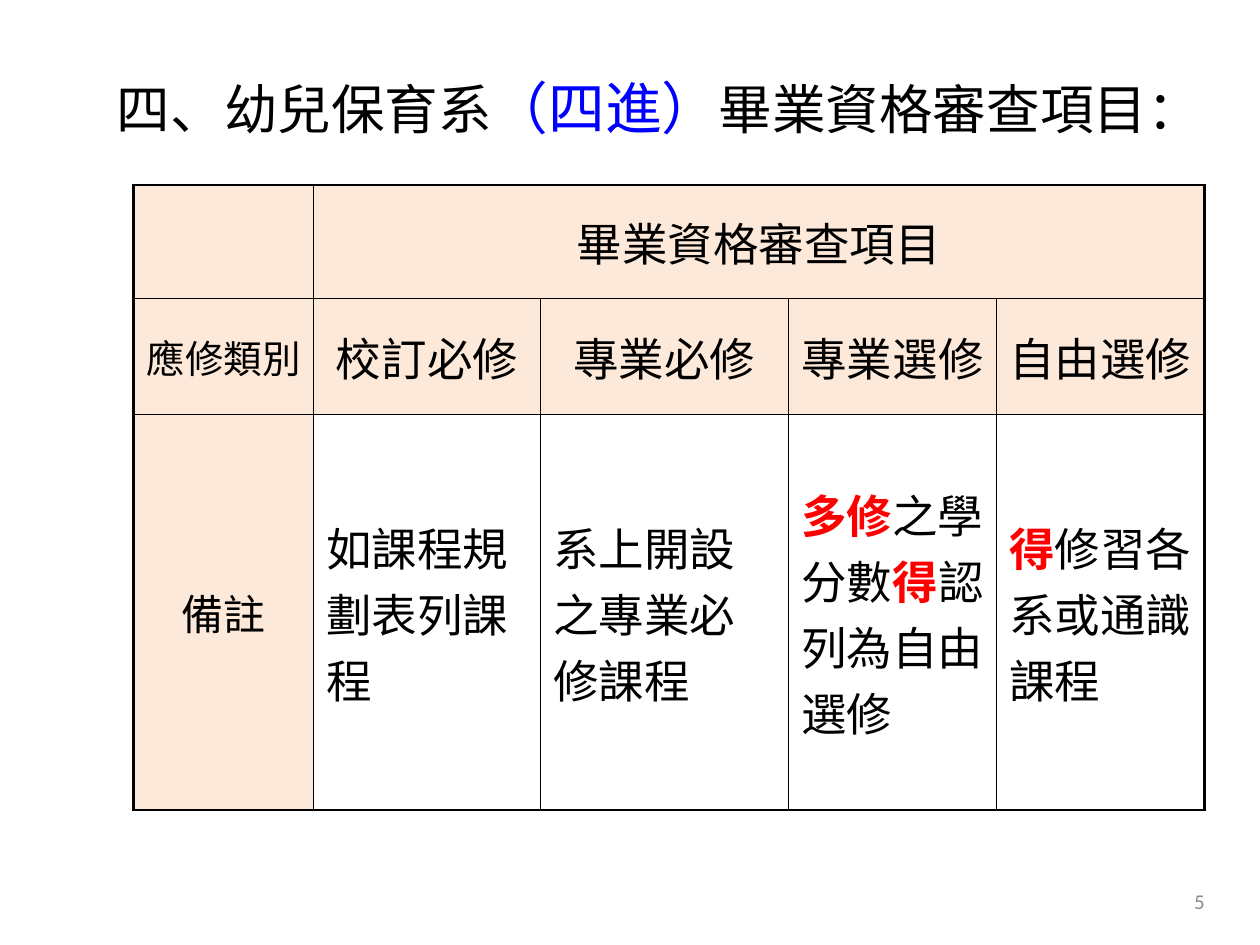
from lxml import etree
from pptx import Presentation
from pptx.dml.color import RGBColor
from pptx.enum.text import MSO_ANCHOR, PP_ALIGN
from pptx.oxml.ns import qn
from pptx.util import Inches, Pt

BLACK = RGBColor(0x00, 0x00, 0x00)
BLUE = RGBColor(0x00, 0x00, 0xFF)
RED = RGBColor(0xFF, 0x00, 0x00)
GRAY = RGBColor(0x8C, 0x8C, 0x8C)
PEACH = RGBColor(0xFD, 0xE9, 0xD9)

TITLE_FONT = "Noto Sans CJK JP"
TABLE_FONT = "Times New Roman"
NUMBER_FONT = "Calibri"

COLUMN_WIDTHS = [1.43, 1.8, 1.97, 1.65, 1.65]
ROW_HEIGHTS = [0.9, 0.92, 3.14]

# Each cell is a list of (text, emphasised) runs.
ROWS = [
    [[], [("畢業資格審查項目", False)], [], [], []],
    [[(name, False)] for name in ("應修類別", "校訂必修", "專業必修", "專業選修", "自由選修")],
    [
        [("備註", False)],
        [("如課程規劃表列課程", False)],
        [("系上開設之專業必修課程", False)],
        [("多修", True), ("之學分數", False), ("得", True), ("認列為自由選修", False)],
        [("得", True), ("修習各系或通識課程", False)],
    ],
]
FONT_SIZES = {(1, 0): 22, (2, 0): 24}
DEFAULT_SIZE = 26


def add_text_box(slide, left, top, width, height):
    frame = slide.shapes.add_textbox(left, top, width, height).text_frame
    frame.word_wrap = True
    frame.vertical_anchor = MSO_ANCHOR.MIDDLE
    return frame


def add_title(slide, left, top, width, height):
    frame = add_text_box(slide, left, top, width, height)
    frame.margin_right = 0
    paragraph = frame.paragraphs[0]
    paragraph.font.name = TITLE_FONT
    parts = [
        ("四、幼兒保育系", 30.6, BLACK),
        ("（四進）", 32.4, BLUE),
        ("畢業資格審查項目：", 30.6, BLACK),
    ]
    for text, size, color in parts:
        run = paragraph.add_run()
        run.text = text
        run.font.size = Pt(size)
        run.font.color.rgb = color


def add_slide_number(slide, left, top, width, height):
    paragraph = add_text_box(slide, left, top, width, height).paragraphs[0]
    paragraph.text = "5"
    paragraph.alignment = PP_ALIGN.RIGHT
    paragraph.font.name = NUMBER_FONT
    paragraph.font.size = Pt(12)
    paragraph.font.color.rgb = GRAY


def set_borders(cell, row, column):
    """Draw thin inner lines and a thicker line on the table's outer edge."""
    outer_edges = {
        "a:lnL": column == 0,
        "a:lnR": column == len(COLUMN_WIDTHS) - 1 or cell.is_merge_origin,
        "a:lnT": row == 0,
        "a:lnB": row == len(ROW_HEIGHTS) - 1,
    }
    properties = cell._tc.get_or_add_tcPr()
    for position, (tag, is_outer) in enumerate(outer_edges.items()):
        line = etree.Element(qn(tag), w=str(Pt(1.5 if is_outer else 1)))
        fill = etree.SubElement(line, qn("a:solidFill"))
        etree.SubElement(fill, qn("a:srgbClr"), val=str(BLACK))
        properties.insert(position, line)


def fill_cell(cell, runs, row, column):
    is_header = row < 2 or column == 0
    if is_header:
        cell.fill.solid()
        cell.fill.fore_color.rgb = PEACH
    else:
        cell.fill.background()
    set_borders(cell, row, column)
    cell.vertical_anchor = MSO_ANCHOR.MIDDLE
    paragraph = cell.text_frame.paragraphs[0]
    paragraph.alignment = PP_ALIGN.CENTER if is_header else PP_ALIGN.LEFT
    paragraph.font.name = TABLE_FONT
    paragraph.font.size = Pt(FONT_SIZES.get((row, column), DEFAULT_SIZE))
    for text, emphasised in runs:
        run = paragraph.add_run()
        run.text = text
        run.font.bold = emphasised
        run.font.color.rgb = RED if emphasised else BLACK


def add_requirements_table(slide, left, top):
    table = slide.shapes.add_table(
        len(ROW_HEIGHTS), len(COLUMN_WIDTHS), left, top,
        Inches(sum(COLUMN_WIDTHS)), Inches(sum(ROW_HEIGHTS)),
    ).table
    table.first_row = False
    table.horz_banding = False
    for column, width in zip(table.columns, COLUMN_WIDTHS):
        column.width = Inches(width)
    for row, height in zip(table.rows, ROW_HEIGHTS):
        row.height = Inches(height)
    table.cell(0, 1).merge(table.cell(0, 4))
    for row, cells in enumerate(ROWS):
        for column, runs in enumerate(cells):
            fill_cell(table.cell(row, column), runs, row, column)


def main():
    presentation = Presentation()
    presentation.slide_width = Inches(10)
    presentation.slide_height = Inches(7.5)
    slide = presentation.slides.add_slide(presentation.slide_layouts[6])
    add_slide_number(slide, Inches(7.33), Inches(6.95), Inches(2.33), Inches(0.4))
    add_requirements_table(slide, Inches(1.06), Inches(1.47))
    add_title(slide, Inches(0.83), Inches(0.3), Inches(8.83), Inches(1.09))
    presentation.save("out.pptx")


if __name__ == "__main__":
    main()
